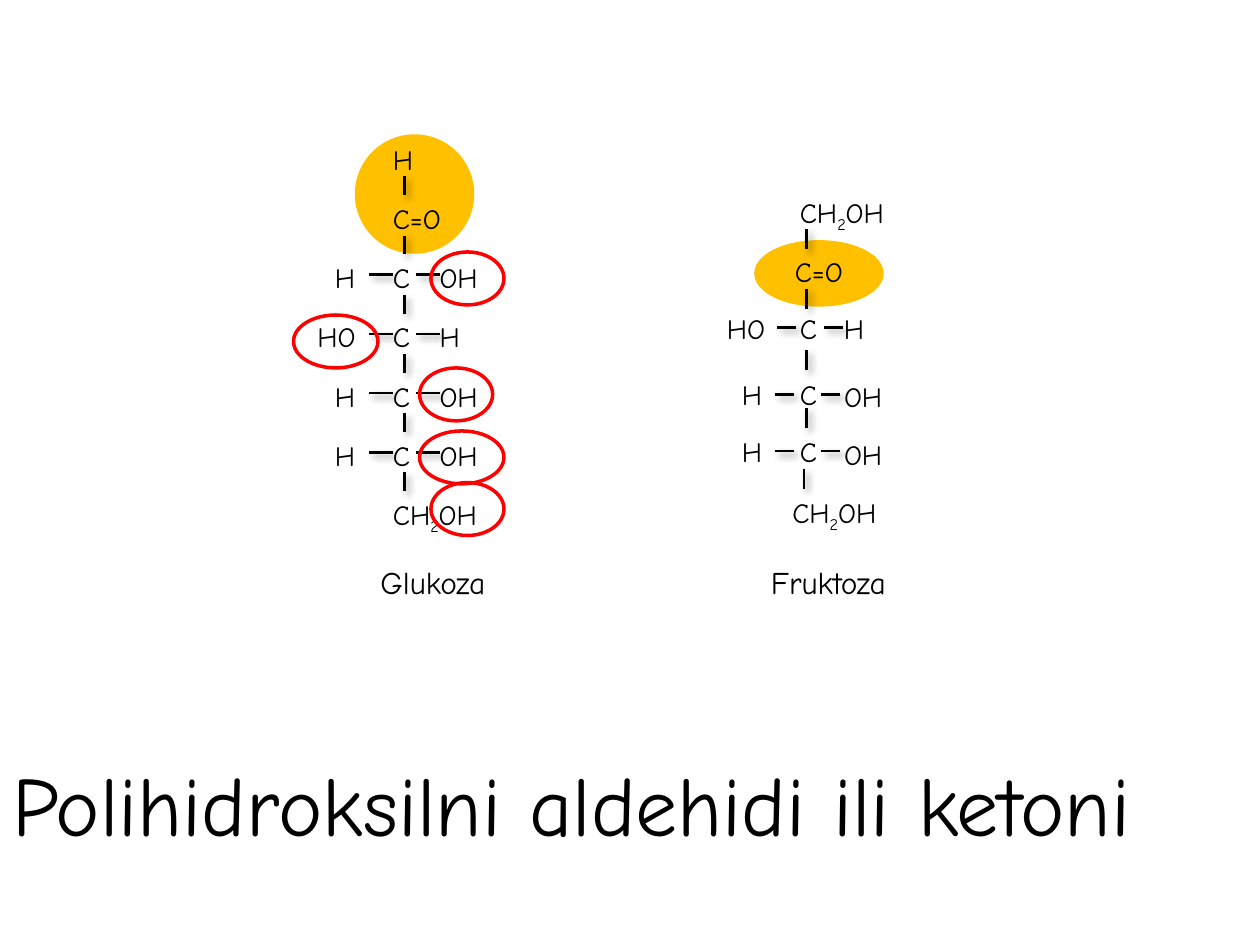
from typing import NamedTuple

from lxml import etree
from pptx import Presentation
from pptx.dml.color import RGBColor
from pptx.enum.shapes import MSO_CONNECTOR, MSO_SHAPE
from pptx.enum.text import MSO_AUTO_SIZE
from pptx.oxml.ns import qn
from pptx.util import Inches, Pt

BLACK = RGBColor(0, 0, 0)
RED = RGBColor(0xFF, 0, 0)
GOLD = RGBColor(0xFF, 0xC0, 0)
OVAL = MSO_SHAPE.OVAL
LINE = MSO_CONNECTOR.STRAIGHT
GROW = MSO_AUTO_SIZE.SHAPE_TO_FIT_TEXT
FONT = "Comic Neue"
STEP = 0.47  # height of one row in the glucose chain


class Label(NamedTuple):
    text: str
    x: float
    y: float
    w: float
    h: float = 0.4
    size: int = 16


class Bond(NamedTuple):
    x1: float
    y1: float
    x2: float
    y2: float


class Ring(NamedTuple):
    x: float
    y: float
    w: float
    h: float = 0.42


def add_label(shapes, item: Label) -> None:
    box = shapes.add_textbox(*map(Inches, item[1:5]))
    frame = box.text_frame
    frame.word_wrap = False
    frame.auto_size = GROW
    para = frame.paragraphs[0]
    # A digit in a formula is set as a subscript
    head, digit, tail = item.text.partition("2")
    for part in filter(None, (head, digit, tail)):
        run = para.add_run()
        run.text = part
        run.font.name = FONT
        run.font.size = Pt(item.size)
        run.font.color.rgb = BLACK
        if part == "2":
            run.font._element.set("baseline", "-25000")


def add_bond(shapes, item: Bond) -> None:
    bond = shapes.add_connector(LINE, *map(Inches, item))
    bond.line.color.rgb = BLACK
    bond.line.width = Pt(1.5)
    effects = etree.SubElement(bond._element.spPr, qn("a:effectLst"))
    shade = etree.SubElement(
        effects, qn("a:outerShdw"), blurRad=str(Pt(4)), dist=str(Pt(3)),
        dir="2700000", algn="tl", rotWithShape="0")
    tone = etree.SubElement(shade, qn("a:srgbClr"), val=str(BLACK))
    etree.SubElement(tone, qn("a:alpha"), val="40000")


def add_ring(shapes, item: Ring, color: RGBColor, solid: bool) -> None:
    ring = shapes.add_shape(OVAL, *map(Inches, item))
    ring.shadow.inherit = False
    ring.line.color.rgb = color
    ring.line.width = Pt(2)
    if solid:
        ring.fill.solid()
        ring.fill.fore_color.rgb = color
    else:
        ring.fill.background()


def draw_glucose(shapes) -> None:
    chain = [("H", 0.52), ("C=O", 0.87), ("C", 0.46), ("C", 0.46),
             ("C", 0.46), ("C", 0.46), ("CH2OH", 1.31)]
    for i, (text, width) in enumerate(chain):
        top = 1.08 + i * STEP
        add_label(shapes, Label(text, 3.02, top, width))
        if i < len(chain) - 1:
            add_bond(shapes, Bond(3.21, top + 0.32, 3.21, top + STEP))
    # Side groups of the four inner carbons
    sides = [("H", 2.56, "OH"), ("HO", 2.42, "H"),
             ("H", 2.56, "OH"), ("H", 2.56, "OH")]
    for i, (left, x, right) in enumerate(sides):
        top = 2.02 + i * STEP
        add_label(shapes, Label(left, x, top, 0.55))
        add_label(shapes, Label(right, 3.39, top, 0.26 + 0.25 * len(right)))
        for start in (2.93, 3.3):
            add_bond(shapes, Bond(start + 0.19, top + 0.16, start, top + 0.16))


def draw_fructose(shapes) -> None:
    for text, x, y, width in (("CH2OH", 6.25, 1.5, 1.19),
                              ("C=O", 6.21, 1.97, 0.79),
                              ("CH2OH", 6.19, 3.88, 1.23)):
        add_label(shapes, Label(text, x, y, width, 0.41))
    for x, y in ((6.4, 1.82), (6.4, 2.29), (6.4, 2.78), (6.4, 3.24), (6.38, 3.72)):
        add_bond(shapes, Bond(x, y, x, y + 0.16))
    # Carbon rows: left group, its x, right group, top, right top, bond start
    rows = [("HO", 5.67, "H", 2.42, 2.42, 6.17),
            ("H", 5.79, "OH", 2.95, 2.96, 6.15),
            ("H", 5.79, "OH", 3.4, 3.42, 6.15)]
    for left, x, right, top, low, start in rows:
        add_label(shapes, Label("C", 6.25, top, 0.42, 0.41))
        add_label(shapes, Label(left, x, top, 0.25 + 0.22 * len(left), 0.41))
        add_label(shapes, Label(right, 6.6, low, 0.25 + 0.22 * len(right), 0.41))
        for edge in (start, start + 0.37):
            add_bond(shapes, Bond(edge + 0.15, top + 0.18, edge, top + 0.18))


def main() -> None:
    deck = Presentation()
    deck.slide_width, deck.slide_height = Inches(10), Inches(7.5)
    shapes = deck.slides.add_slide(deck.slide_layouts[6]).shapes

    # Carbonyl highlights
    for spot in (Ring(6, 1.92, 1, 0.5), Ring(2.83, 1.08, 0.92, 0.92)):
        add_ring(shapes, spot, GOLD, True)

    # Title and sugar names
    for item in (
        Label("Polihidroksilni aldehidi ili ketoni", 0, 5.92, 10.31, 0.91, 48),
        Label("Glukoza", 2.92, 4.42, 1.18, size=18),
        Label("Fruktoza", 6.02, 4.42, 1.34, size=18),
    ):
        add_label(shapes, item)

    # Molecules
    draw_glucose(shapes)
    draw_fructose(shapes.add_group_shape().shapes)

    # Hydroxyl rings
    for ring in (Ring(2.33, 2.5, 0.67), Ring(3.42, 2, 0.58),
                 Ring(3.42, 3.83, 0.58), Ring(3.33, 3.42, 0.67),
                 Ring(3.33, 2.92, 0.58)):
        add_ring(shapes, ring, RED, False)

    deck.save("out.pptx")


if __name__ == "__main__":
    main()
